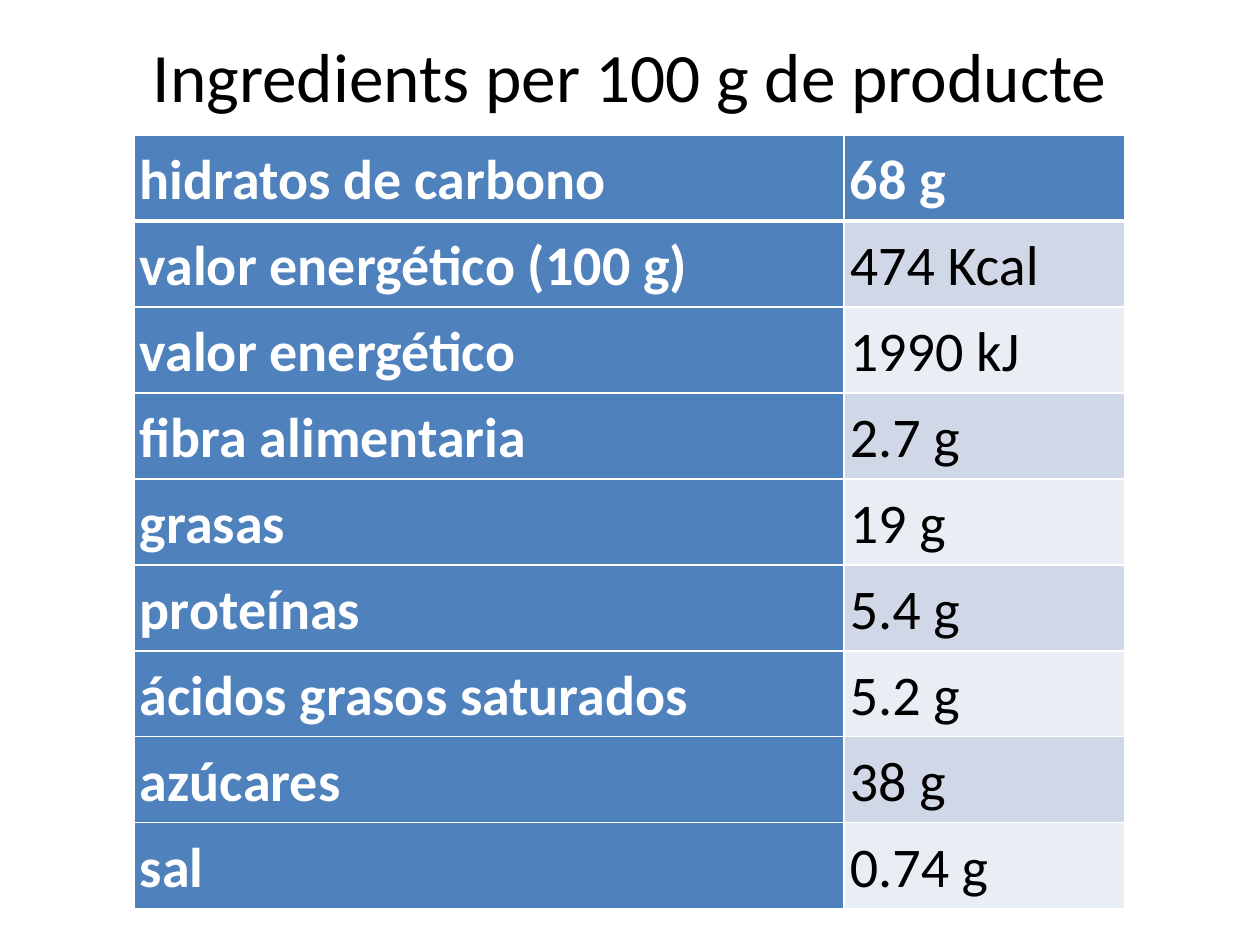
from dataclasses import dataclass

from lxml import etree
from pptx import Presentation
from pptx import util as u
from pptx.dml.color import RGBColor
from pptx.enum import text
from pptx.oxml.ns import qn


@dataclass(frozen=True)
class Theme:
    """Colours, font and type sizes of the deck."""
    font: str = "Calibri"
    title_size: float = 39.6
    cell_size: float = 32
    line_spacing: float = 1.07
    ink: str = "000000"
    paper: str = "FFFFFF"
    accent: str = "4F81BD"
    bands: tuple = ("E9EDF4", "D0D8E8")


THEME = Theme()
TITLE = "Ingredients per 100 g de producte"
NUTRIENTS = [
    ("hidratos de carbono", "68 g"),
    ("valor energético (100 g)", "474 Kcal"),
    ("valor energético", "1990 kJ"),
    ("fibra alimentaria", "2.7 g"),
    ("grasas", "19 g"),
    ("proteínas", "5.4 g"),
    ("ácidos grasos saturados", "5.2 g"),
    ("azúcares", "38 g"),
    ("sal", "0.74 g"),
]


def px(length):
    """Turn pixels into EMU at 126 pixels to the inch."""
    return u.Emu(round(length * 914400 / 126))


def add_span(para, words, size, color, bold=False):
    """Add one formatted run to a paragraph."""
    span = para.add_run()
    span.text = words
    span.font.name = THEME.font
    span.font.size = u.Pt(size)
    span.font.bold = bold
    span.font.color.rgb = RGBColor.from_string(color)


def set_border(cell, side, width):
    """Draw one side of a cell's border in the paper colour."""
    line = etree.Element(qn(f"a:ln{side}"), w=str(u.Pt(width)))
    fill = etree.SubElement(line, qn("a:solidFill"))
    etree.SubElement(fill, qn("a:srgbClr"), val=THEME.paper)
    properties = cell._tc.get_or_add_tcPr()
    properties.insert(len(properties.findall("*")) - 1, line)


def place_title(page, box):
    """Place the title in the upper part of its box."""
    title = page.shapes.title
    title.left, title.top, title.width, title.height = map(px, box)
    frame = title.text_frame
    frame.word_wrap = True
    frame.auto_size = text.MSO_AUTO_SIZE.NONE
    frame.vertical_anchor = text.MSO_ANCHOR.MIDDLE
    frame.margin_bottom = px(90)
    para = frame.paragraphs[0]
    para.alignment = text.PP_ALIGN.CENTER
    add_span(para, TITLE, THEME.title_size, THEME.ink)


def fill_cell(cell, words, fill, color, bold, bottom):
    """Format one table cell and write its words."""
    cell.margin_left = cell.margin_right = px(6)
    cell.margin_top = cell.margin_bottom = px(6)
    cell.vertical_anchor = text.MSO_ANCHOR.MIDDLE
    cell.fill.solid()
    cell.fill.fore_color.rgb = RGBColor.from_string(fill)
    for side, width in zip("LRTB", (1, 1, 1, bottom)):
        set_border(cell, side, width)
    para = cell.text_frame.paragraphs[0]
    para.line_spacing = THEME.line_spacing
    add_span(para, words, THEME.cell_size, color, bold)


def place_nutrients(page, box, value_width):
    """Place the nutrient table with equal rows in its box."""
    left, top, width, height = box
    table = page.shapes.add_table(len(NUTRIENTS), 2, *map(px, box)).table
    table.first_col = True
    table.columns[0].width = px(width - value_width)
    table.columns[1].width = px(value_width)
    for index, entry in enumerate(NUTRIENTS):
        table.rows[index].height = px(height / len(NUTRIENTS))
        for column, words in enumerate(entry):
            strong = index == 0 or column == 0
            fill = THEME.accent if strong else THEME.bands[index % 2]
            color = THEME.paper if strong else THEME.ink
            bottom = 3 if index == 0 else 1
            top_width = table.cell(index, column)
            fill_cell(top_width, words, fill, color, strong, bottom)
            if index == 1:
                top_line = top_width._tc.tcPr.find(qn("a:lnT"))
                top_line.set("w", str(u.Pt(3)))


def main():
    """Build and save the deck."""
    deck = Presentation()
    deck.slide_width, deck.slide_height = px(1260), px(945)
    page = deck.slides.add_slide(deck.slide_layouts[5])
    place_title(page, (63, 38, 1134, 157))
    place_nutrients(page, (134, 135, 991, 774), 281)
    deck.save("out.pptx")


if __name__ == "__main__":
    main()
